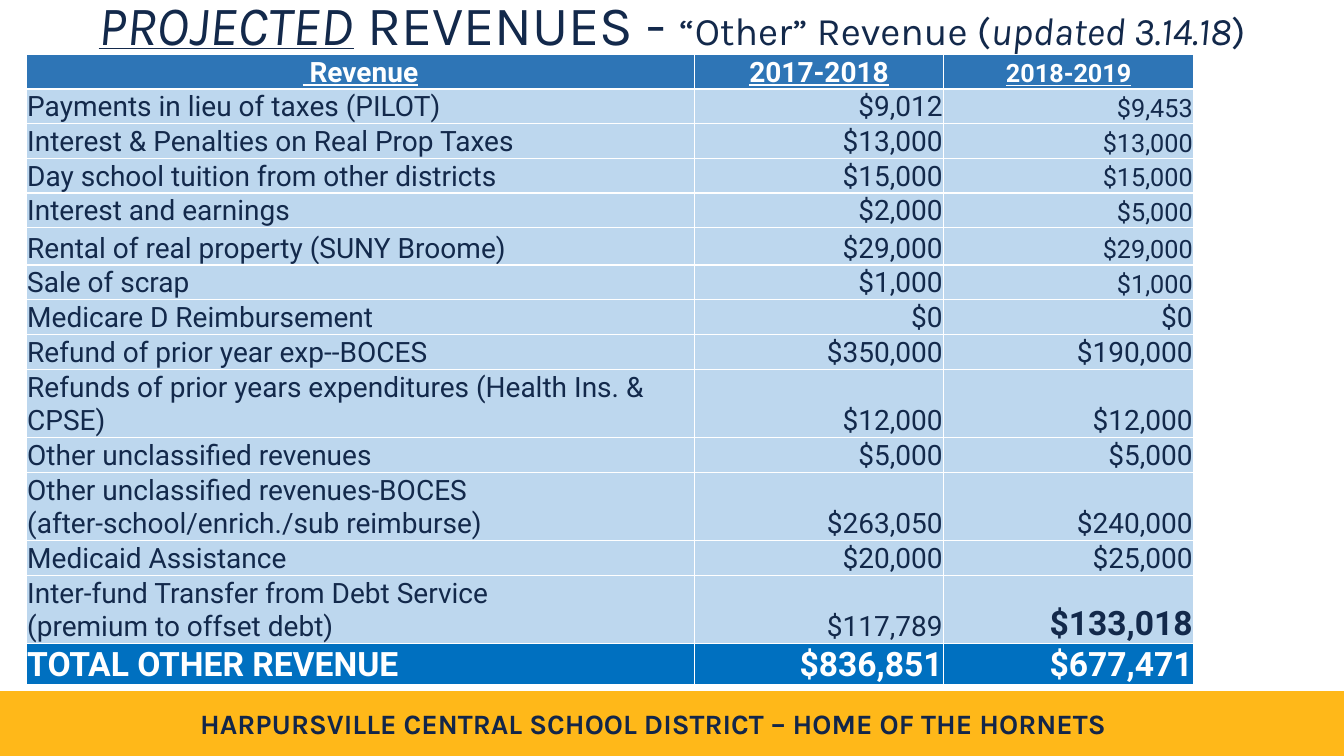
from lxml import etree
from pptx import Presentation
from pptx import util as u
from pptx.dml.color import RGBColor
from pptx.enum import shapes, text
from pptx.oxml import ns

THEME = {
    "navy": "13294B", "footer_navy": "132649", "gold": "FFB819", "white": "FFFFFF",
    "header": "2E75B6", "body": "BDD7EE", "total": "0070C0",
    "display": "Karla", "text": "Roboto",
    "title": 39.6, "subtitle": 27.9, "large": 24, "normal": 20, "small": 18,
}


def style(font, face, size, color, bold=False, italic=False, underline=False):
    font.name = THEME[face]
    font.size = u.Pt(THEME[size])
    font.color.rgb = RGBColor.from_string(THEME[color])
    font.bold, font.italic, font.underline = bold, italic, underline


def add_borders(cell):
    properties = cell._tc.get_or_add_tcPr()
    for position, side in enumerate(("lnL", "lnR", "lnT", "lnB")):
        line = etree.Element(ns.qn(f"a:{side}"), w=str(u.Pt(1)))
        fill = etree.SubElement(line, ns.qn("a:solidFill"))
        etree.SubElement(fill, ns.qn("a:srgbClr"), val=THEME["white"])
        properties.insert(position, line)


deck = Presentation()
deck.slide_width, deck.slide_height = u.Inches(13.33), u.Inches(7.5)
page = deck.slides.add_slide(deck.slide_layouts[6])

bands = [(0, 6.86, 0.63, "gold"), (0, 0, 0.54, "white")]
for left, top, height, color in bands:
    band = page.shapes.add_shape(shapes.MSO_SHAPE.RECTANGLE, u.Inches(left), u.Inches(top),
                                 deck.slide_width, u.Inches(height))
    band.shadow.inherit = False
    band.fill.solid()
    band.fill.fore_color.rgb = RGBColor.from_string(THEME[color])
    band.line.color.rgb = RGBColor.from_string(THEME[color])
    band.line.width = u.Pt(1)
title = band
title.line.fill.background()

footer = page.shapes.add_textbox(u.Inches(1.76), u.Inches(6.96), u.Inches(9.44), u.Inches(0.44))
footer.text_frame.word_wrap = True
footer.text_frame.auto_size = text.MSO_AUTO_SIZE.SHAPE_TO_FIT_TEXT
footer.text_frame.text = "HARPURSVILLE CENTRAL SCHOOL DISTRICT – HOME OF THE HORNETS"
para = footer.text_frame.paragraphs[0]
para.alignment = text.PP_ALIGN.CENTER
style(para.runs[0].font, "display", "normal", "footer_navy", bold=True)

title.text_frame.word_wrap = True
title.text_frame.vertical_anchor = text.MSO_ANCHOR.MIDDLE
para = title.text_frame.paragraphs[0]
para.alignment = text.PP_ALIGN.CENTER
para.line_spacing = 0.9
title_parts = [
    ("PROJECTED", "title", True, True),
    (" REVENUES - ", "title", False, False),
    ("“Other” Revenue (", "subtitle", False, False),
    ("updated 3.14.18", "subtitle", True, False),
    (")", "subtitle", False, False),
]
for words, size, italic, underline in title_parts:
    span = para.add_run()
    span.text = words
    style(span.font, "display", size, "navy", italic=italic, underline=underline)

revenues = [
    ("\u00a0Revenue", "2017-2018", "2018-2019", 0.33),
    ("Payments in lieu of taxes (PILOT)", "$9,012", "$9,453", 0.34),
    ("Interest & Penalties on Real Prop Taxes", "$13,000", "$13,000", 0.34),
    ("Day school tuition from other districts", "$15,000", "$15,000", 0.34),
    ("Interest and earnings", "$2,000", "$5,000", 0.34),
    ("Rental of real property (SUNY Broome)", "$29,000", "$29,000", 0.37),
    ("Sale of scrap", "$1,000", "$1,000", 0.34),
    ("Medicare D Reimbursement", "$0", "$0", 0.35),
    ("Refund of prior year exp--BOCES", "$350,000", "$190,000", 0.34),
    ("Refunds of prior years expenditures (Health Ins. & CPSE)", "$12,000", "$12,000", 0.66),
    ("Other unclassified revenues", "$5,000", "$5,000", 0.34),
    ("Other unclassified revenues-BOCES\v(after-school/enrich./sub reimburse)",
     "$263,050", "$240,000", 0.66),
    ("Medicaid Assistance", "$20,000", "$25,000", 0.34),
    ("Inter-fund Transfer from Debt Service\n(premium to offset debt)",
     "$117,789", "$133,018", 0.66),
    ("TOTAL OTHER REVENUE", "$836,851", "$677,471", 0.4),
]
last = len(revenues) - 1
table = page.shapes.add_table(len(revenues), 3, u.Inches(0.26), u.Inches(0.54),
                              u.Inches(11.58), u.Inches(6.15)).table
table.horz_banding = False
for column, width in zip(table.columns, (6.63, 2.47, 2.48)):
    column.width = u.Inches(width)

for r, (*values, height) in enumerate(revenues):
    table.rows[r].height = u.Inches(height)
    row_fill = "header" if r == 0 else "total" if r == last else "body"
    for c, value in enumerate(values):
        cell = table.cell(r, c)
        cell.text = value
        cell.vertical_anchor = text.MSO_ANCHOR.BOTTOM
        cell.margin_left = cell.margin_right = cell.margin_top = u.Inches(0.01)
        cell.margin_bottom = 0
        cell.fill.solid()
        cell.fill.fore_color.rgb = RGBColor.from_string(THEME[row_fill])
        add_borders(cell)
        emphasized = r == last or (r == last - 1 and c == 2)
        size = "large" if emphasized else "small" if c == 2 and r <= 6 else "normal"
        for para in cell.text_frame.paragraphs:
            if r == 0:
                para.alignment = text.PP_ALIGN.CENTER
            else:
                para.alignment = text.PP_ALIGN.RIGHT if c else text.PP_ALIGN.LEFT
            for span in para.runs:
                style(span.font, "text", size, "navy" if row_fill == "body" else "white",
                      bold=emphasized or r == 0, underline=r == 0)

deck.save("out.pptx")
